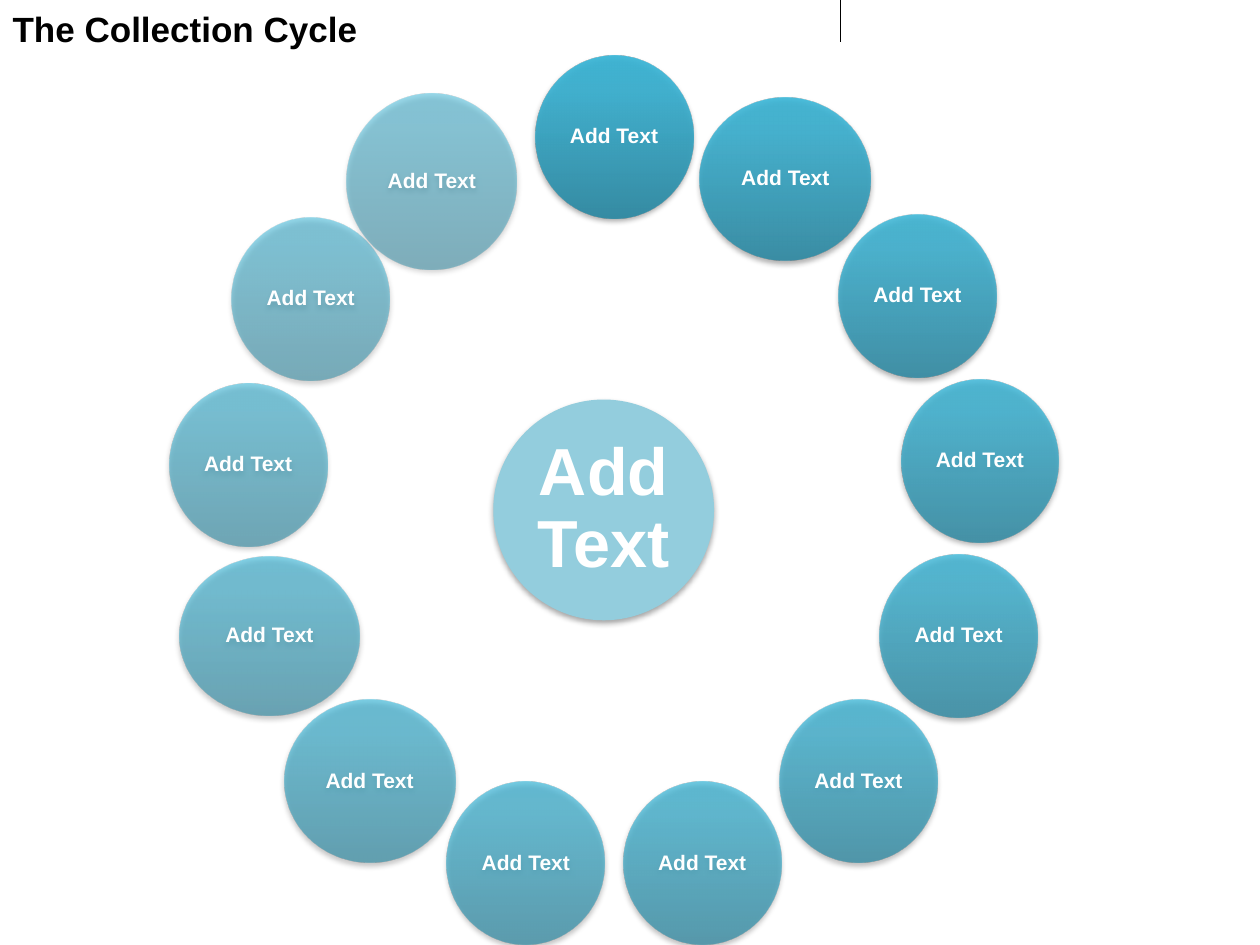
from math import cos, pi, sin

from lxml.etree import SubElement
from pptx import Presentation
from pptx.dml.color import RGBColor
from pptx.enum.shapes import MSO_CONNECTOR, MSO_SHAPE
from pptx.enum.text import MSO_ANCHOR, MSO_AUTO_SIZE, PP_ALIGN
from pptx.oxml import parse_xml
from pptx.oxml.ns import nsdecls, qn
from pptx.util import Cm, Pt

WHITE, BLACK, PALE_BLUE = "FFFFFF", "000000", "93CDDD"
GRADIENT = [(0, "2A88A2"), (80, "37B1D2"), (100, "34B4D6")]
STEP_COUNT = 13
RING_X, RING_Y, RING_RADIUS = 12.38, 10.19, 7.43
STEP_SIZE = (3.18, 3.28)
SPECIAL_SIZES = {1: (3.45, 3.28), 8: (3.45, 3.28), 9: (3.63, 3.2), 12: (3.43, 3.53)}
NUDGES = {10: (0, 0.08), 11: (0, 0.06), 12: (-0.22, 0.05)}


def color(hex_code):
    return RGBColor.from_string(hex_code)


def style_text(paragraph, size, hex_code, alignment):
    paragraph.alignment = alignment
    font = paragraph.font
    font.name, font.size, font.bold = "Arial", Pt(size), True
    font.color.rgb = color(hex_code)


def add_title(slide, text):
    title = slide.shapes.title
    title.left, title.top, title.width, title.height = Cm(0), Cm(0.03), Cm(16.08), Cm(1.12)
    frame = title.text_frame
    frame.text = text
    frame.vertical_anchor = MSO_ANCHOR.TOP
    frame.auto_size = MSO_AUTO_SIZE.SHAPE_TO_FIT_TEXT
    style_text(frame.paragraphs[0], 20, BLACK, PP_ALIGN.LEFT)


def add_divider(slide):
    divider = slide.shapes.add_connector(
        MSO_CONNECTOR.STRAIGHT, Cm(16.94), Cm(0), Cm(16.94), Cm(0.84))
    divider.line.color.rgb = color(BLACK)
    divider.line.width = Pt(0.75)
    SubElement(divider.element.spPr, qn("a:effectLst"))


def add_drop_shadow(circle):
    circle.element.spPr.append(parse_xml(
        f'<a:effectLst {nsdecls("a")}>'
        '<a:outerShdw blurRad="40000" dist="23000" dir="5400000" rotWithShape="0">'
        f'<a:srgbClr val="{BLACK}"><a:alpha val="35000"/></a:srgbClr>'
        '</a:outerShdw></a:effectLst>'))


def fill_gradient(circle, opacity):
    stops = "".join(
        f'<a:gs pos="{position * 1000}"><a:srgbClr val="{hex_code}">'
        f'<a:alpha val="{round(opacity * 1000)}"/></a:srgbClr></a:gs>'
        for position, hex_code in GRADIENT)
    gradient = parse_xml(
        f'<a:gradFill {nsdecls("a")} rotWithShape="1"><a:gsLst>{stops}</a:gsLst>'
        '<a:lin ang="16200000" scaled="0"/></a:gradFill>')
    circle.element.spPr.find(qn("a:prstGeom")).addnext(gradient)


def add_circle(slide, center_x, center_y, width, height, text, size, inset):
    circle = slide.shapes.add_shape(
        MSO_SHAPE.OVAL, Cm(center_x - width / 2), Cm(center_y - height / 2),
        Cm(width), Cm(height))
    circle.line.fill.background()
    add_drop_shadow(circle)
    frame = circle.text_frame
    frame.word_wrap = True
    frame.vertical_anchor = MSO_ANCHOR.MIDDLE
    frame.margin_left = frame.margin_right = Cm(inset)
    frame.margin_top = frame.margin_bottom = Cm(inset)
    frame.text = text
    frame.paragraphs[0].line_spacing = 0.9
    style_text(frame.paragraphs[0], size, WHITE, PP_ALIGN.CENTER)
    return circle


def add_hub(slide):
    hub = add_circle(slide, 12.17, 10.28, 4.45, 4.45, "Add Text", 38, 0.12)
    hub.fill.solid()
    hub.fill.fore_color.rgb = color(PALE_BLUE)


def add_ring(slide):
    for index in range(STEP_COUNT):
        angle = 2 * pi * index / STEP_COUNT
        shift_x, shift_y = NUDGES.get(index, (0, 0))
        width, height = SPECIAL_SIZES.get(index, STEP_SIZE)
        step = add_circle(
            slide, RING_X + RING_RADIUS * sin(angle) + shift_x,
            RING_Y - RING_RADIUS * cos(angle) + shift_y,
            width, height, "Add Text", 12, 0.04)
        fill_gradient(step, 90 - 40 * index / (STEP_COUNT - 1))


def main():
    deck = Presentation()
    deck.slide_width, deck.slide_height = Cm(25.4), Cm(19.05)
    slide = deck.slides.add_slide(deck.slide_layouts[5])
    add_divider(slide)
    add_title(slide, "The Collection Cycle")
    add_hub(slide)
    add_ring(slide)
    deck.save("out.pptx")


if __name__ == "__main__":
    main()
